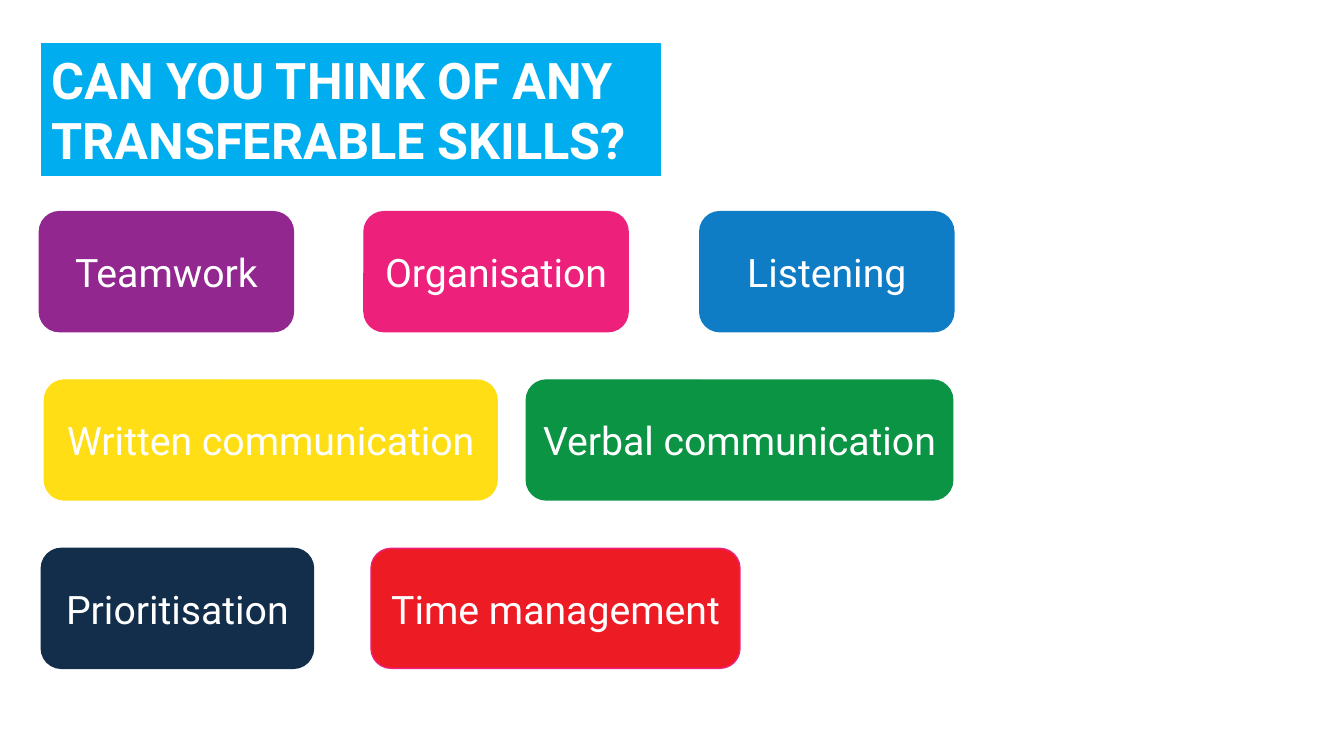
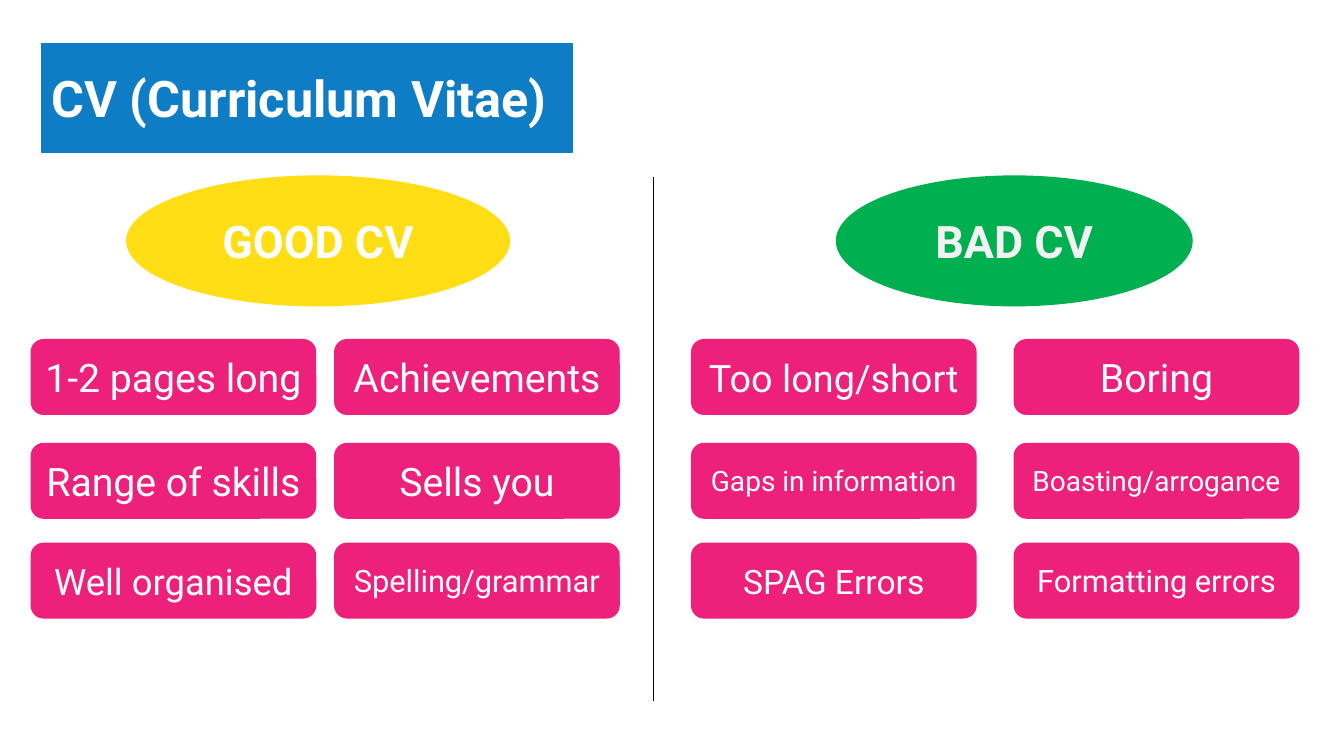
from lxml import etree
from pptx import Presentation
from pptx.dml.color import RGBColor
from pptx.enum import shapes, text
from pptx.oxml.ns import qn
from pptx.util import Inches, Pt

FONT = "Roboto"
WHITE, BLACK, PALE = "FFFFFF", "000000", "F2F2F2"
CYAN, BLUE, NAVY = "00AEEF", "0F7CC6", "132E4B"
PURPLE, PINK, RED = "92278F", "ED217C", "ED1C24"
YELLOW, GREEN, BRIGHT_GREEN = "FFDE16", "0B9444", "00B050"


def rgb(value):
    return RGBColor.from_string(value)


class Deck:
    """Holds the shared style and the slide being built."""

    def __init__(self):
        self.prs = Presentation()
        self.prs.slide_width, self.prs.slide_height = Inches(13.33), Inches(7.5)
        self.slide = None

    def new_slide(self, title, width, height, color):
        self.slide = self.prs.slides.add_slide(self.prs.slide_layouts[5])
        band = self.slide.shapes.title
        band.left, band.top = Inches(0.41), Inches(0.43)
        band.width, band.height = Inches(width), Inches(height)
        self.paint(band, color, color)
        self.label(band, title, 36, bold=True, align=text.PP_ALIGN.LEFT)

    def paint(self, shape, fill, line=None):
        shape.fill.solid()
        shape.fill.fore_color.rgb = rgb(fill)
        if line:
            shape.line.color.rgb = rgb(line)
            shape.line.width = Pt(1)
        else:
            shape.line.fill.background()

    def label(self, shape, words, size, color=WHITE, bold=False,
              align=text.PP_ALIGN.CENTER):
        frame = shape.text_frame
        frame.word_wrap = True
        frame.auto_size = text.MSO_AUTO_SIZE.NONE
        frame.vertical_anchor = text.MSO_ANCHOR.MIDDLE
        paragraph = frame.paragraphs[0]
        paragraph.alignment = align
        run = paragraph.add_run()
        run.text = words
        run.font.name, run.font.size, run.font.bold = FONT, Pt(size), bold
        run.font.color.rgb = rgb(color)

    def shape(self, kind, left, top, width, height, fill, line=None):
        shape = self.slide.shapes.add_shape(
            kind, Inches(left), Inches(top), Inches(width), Inches(height))
        shape.shadow.inherit = False
        self.paint(shape, fill, line)
        return shape

    def card(self, words, left, top, width, height, fill, line=None, size=28):
        card = self.shape(shapes.MSO_SHAPE.ROUNDED_RECTANGLE,
                          left, top, width, height, fill, line or fill)
        self.label(card, words, size)

    def heading(self, words, left, width, fill, color):
        oval = self.shape(shapes.MSO_SHAPE.OVAL, left, 1.74, width, 1.3, fill)
        self.label(oval, words, 32, color, bold=True)

    def divider(self, x, top, bottom):
        line = self.slide.shapes.add_connector(
            shapes.MSO_CONNECTOR.STRAIGHT,
            Inches(x), Inches(top), Inches(x), Inches(bottom))
        line.line.color.rgb = rgb(BLACK)
        line.line.width = Pt(0.5)
        etree.SubElement(line._element.spPr, qn("a:effectLst"))


def transferable_skills(deck):
    deck.new_slide("CAN YOU THINK OF ANY TRANSFERABLE SKILLS?", 6.14, 1.31, CYAN)

    # Rows of skills: words, left, width, fill, optional outline
    skill_rows = [
        [("Teamwork", 0.39, 2.52, PURPLE),
         ("Organisation", 3.61, 2.62, PINK),
         ("Listening", 6.94, 2.52, BLUE)],
        [("Written communication", 0.44, 4.49, YELLOW),
         ("Verbal communication", 5.22, 4.23, GREEN)],
        [("Prioritisation", 0.41, 2.7, NAVY),
         ("Time management", 3.68, 3.66, RED, PINK)],
    ]
    for row, skills in enumerate(skill_rows):
        for skill, left, width, *colors in skills:
            deck.card(skill, left, 2.1 + 1.67 * row, width, 1.19, *colors)


def curriculum_vitae(deck):
    deck.new_slide("CV (Curriculum Vitae)", 5.27, 1.08, BLUE)

    # Two halves with their headings
    deck.heading("GOOD CV", 1.25, 3.81, YELLOW, WHITE)
    deck.heading("BAD CV", 8.29, 3.54, BRIGHT_GREEN, PALE)
    deck.divider(6.48, 1.76, 6.95)

    # Columns of traits, each with its text size
    trait_columns = {
        0.31: [("1-2 pages long", 28), ("Range of skills", 28),
               ("Well organised", 26)],
        3.32: [("Achievements", 28), ("Sells you", 28),
               ("Spelling/grammar", 22)],
        6.86: [("Too long/short", 27), ("Gaps in information", 20),
               ("SPAG Errors", 24)],
        10.06: [("Boring", 28), ("Boasting/arrogance", 20),
                ("Formatting errors", 22)],
    }
    for left, traits in trait_columns.items():
        for top, (trait, size) in zip((3.37, 4.4, 5.39), traits):
            deck.card(trait, left, top, 2.82, 0.74, PINK, size=size)


def main():
    deck = Deck()
    transferable_skills(deck)
    curriculum_vitae(deck)
    deck.prs.save("out.pptx")


if __name__ == "__main__":
    main()
